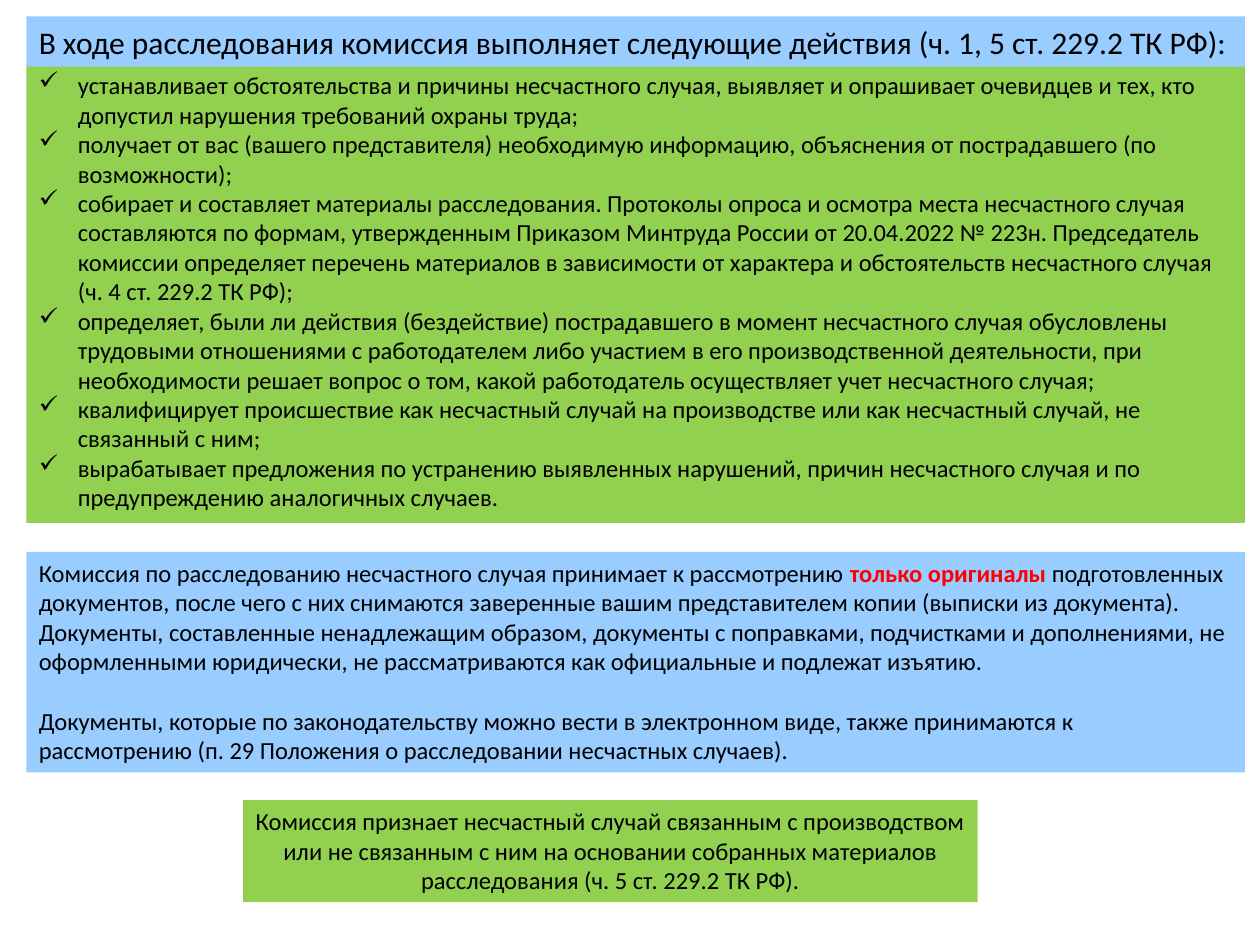
from dataclasses import dataclass

from lxml import etree
from pptx import Presentation
from pptx import util as u
from pptx.dml.color import RGBColor
from pptx.enum import text
from pptx.oxml import ns


@dataclass
class Theme:
    font: str = "Calibri"
    ink: str = "000000"
    accent: str = "FF0000"
    green: str = "92D050"
    blue: str = "99CCFF"
    heading: int = 18
    body: int = 14


theme = Theme()
PX = 9144
LEFT, WIDTH = 21, 967
HANG = 31

deck = Presentation()
deck.slide_width, deck.slide_height = 1000 * PX, 750 * PX
slide = deck.slides.add_slide(deck.slide_layouts[6])


def add_panel(left, top, width, height, fill, lines, size=theme.body):
    panel = slide.shapes.add_textbox(left * PX, top * PX, width * PX, height * PX)
    panel.fill.solid()
    panel.fill.fore_color.rgb = RGBColor.from_string(fill)
    frame = panel.text_frame
    frame.word_wrap = True
    frame.text = "\n".join(lines)
    for paragraph in frame.paragraphs:
        for run in paragraph.runs:
            style_run(run, size, theme.ink)
    return frame.paragraphs


def style_run(run, size, color, bold=False):
    run.font.name = theme.font
    run.font.size = u.Pt(size)
    run.font.bold = bold
    run.font.color.rgb = RGBColor.from_string(color)


actions = [
    "устанавливает обстоятельства и причины несчастного случая, выявляет и опрашивает очевидцев и тех, кто допустил нарушения требований охраны труда;",
    "получает от вас (вашего представителя) необходимую информацию, объяснения от пострадавшего (по возможности);",
    "собирает и составляет материалы расследования. Протоколы опроса и осмотра места несчастного случая составляются по формам, утвержденным Приказом Минтруда России от 20.04.2022 № 223н. Председатель комиссии определяет перечень материалов в зависимости от характера и обстоятельств несчастного случая (ч. 4 ст. 229.2 ТК РФ);",
    "определяет, были ли действия (бездействие) пострадавшего в момент несчастного случая обусловлены трудовыми отношениями с работодателем либо участием в его производственной деятельности, при необходимости решает вопрос о том, какой работодатель осуществляет учет несчастного случая;",
    "квалифицирует происшествие как несчастный случай на производстве или как несчастный случай, не связанный с ним;",
    "вырабатывает предложения по устранению выявленных нарушений, причин несчастного случая и по предупреждению аналогичных случаев.",
]
for action in add_panel(LEFT, 51, WIDTH, 364, theme.green, actions):
    properties = action._p.get_or_add_pPr()
    properties.set("marL", str(HANG * PX))
    properties.set("indent", str(-HANG * PX))
    etree.SubElement(properties, ns.qn("a:buChar")).set("char", "✓")

originals, electronic = add_panel(LEFT, 438, WIDTH, 175, theme.blue, [
    "Комиссия по расследованию несчастного случая принимает к рассмотрению ",
    "Документы, которые по законодательству можно вести в электронном виде, также принимаются к рассмотрению (п. 29 Положения о расследовании несчастных случаев).",
])
for wording, color, bold in [
    ("только оригиналы ", theme.accent, True),
    ("подготовленных документов, после чего с них снимаются заверенные вашим представителем копии (выписки из документа). Документы, составленные ненадлежащим образом, документы с поправками, подчистками и дополнениями, не оформленными юридически, не рассматриваются как официальные и подлежат изъятию.", theme.ink, False),
]:
    run = originals.add_run()
    run.text = wording
    style_run(run, theme.body, color, bold)
electronic.space_before = u.Pt(17)

[conclusion] = add_panel(193, 635, 583, 81, theme.green, [
    "Комиссия признает несчастный случай связанным с производством или не связанным с ним на основании собранных материалов расследования (ч. 5 ст. 229.2 ТК РФ).",
])
conclusion.alignment = text.PP_ALIGN.CENTER

add_panel(LEFT, 13, WIDTH, 40, theme.blue, [
    "В ходе расследования комиссия выполняет следующие действия (ч. 1, 5 ст. 229.2 ТК РФ):",
], theme.heading)

deck.save("out.pptx")
